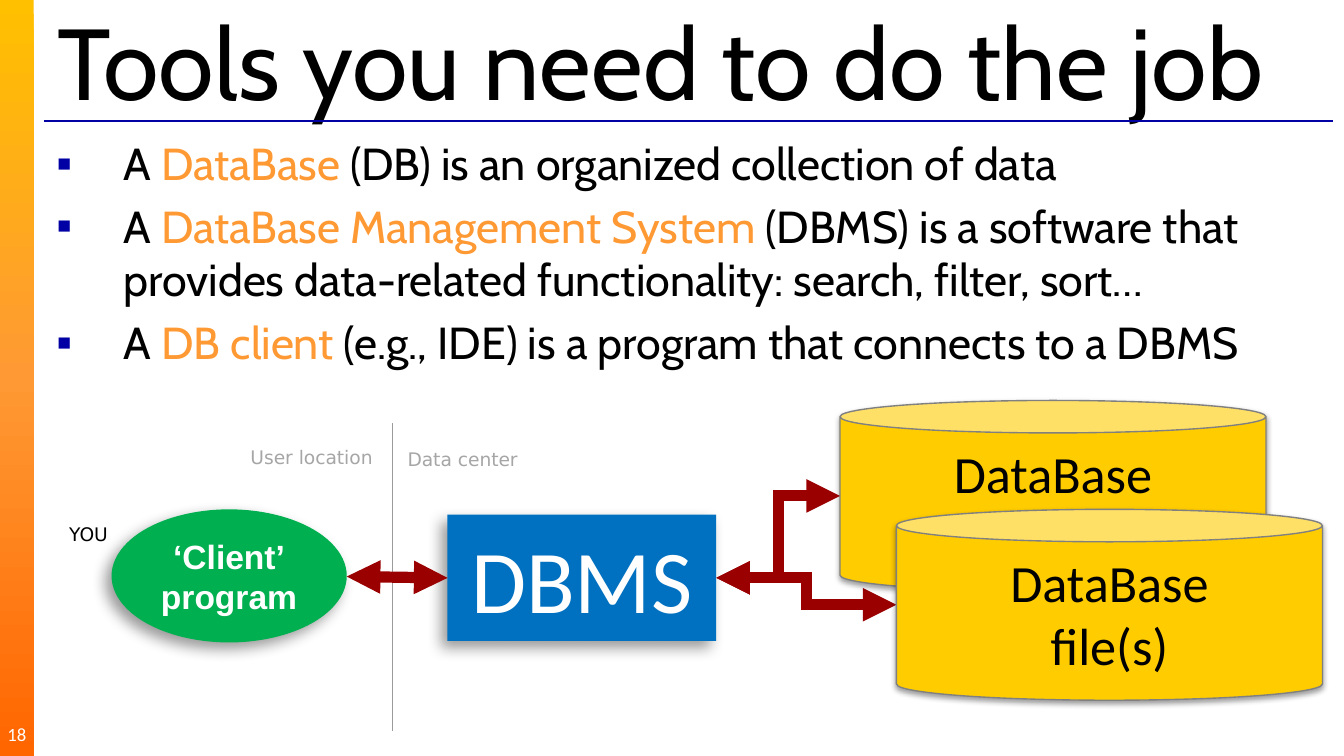
"""Build the slide on the tools needed to work with a database."""
import pptx
import pptx.util
import pptx.oxml
import pptx.oxml.ns
import pptx.dml.color
import pptx.enum.shapes
import pptx.enum.text

Inches = pptx.util.Inches
Pt = pptx.util.Pt
RGBColor = pptx.dml.color.RGBColor
SHAPE = pptx.enum.shapes.MSO_SHAPE
CONNECTOR = pptx.enum.shapes.MSO_CONNECTOR
ALIGN = pptx.enum.text.PP_ALIGN
ANCHOR = pptx.enum.text.MSO_ANCHOR
NS = 'xmlns:a="http://schemas.openxmlformats.org/drawingml/2006/main"'

BLACK = RGBColor(0x00, 0x00, 0x00)
WHITE = RGBColor(0xFF, 0xFF, 0xFF)
ORANGE = RGBColor(0xFF, 0x99, 0x33)
NAVY = RGBColor(0x00, 0x00, 0xA5)
BLUE = RGBColor(0x00, 0x70, 0xC0)
GREEN = RGBColor(0x00, 0xB0, 0x50)
YELLOW = RGBColor(0xFF, 0xCC, 0x00)
RED = RGBColor(0x9A, 0x00, 0x00)
OUTLINE = RGBColor(0x80, 0x80, 0x80)
DIVIDER = RGBColor(0x9B, 0x9B, 0x9B)
LABEL = RGBColor(0xA6, 0xA6, 0xA6)


def write(p, text, font="Calibri", size=10, color=BLACK, bold=False, align=ALIGN.LEFT):
    p.alignment = align
    for i, line in enumerate(text.split("\n")):
        if i:
            p.add_line_break()
        r = p.add_run()
        r.text = line
        r.font.name = font
        r.font.size = Pt(size)
        r.font.bold = bold
        r.font.color.rgb = color


def connect(kind, start, end, color, width, arrows=False):
    c = s.shapes.add_connector(kind, *map(Inches, start + end))
    c.line.color.rgb = color
    c.line.width = Pt(width)
    if arrows:
        ln = c.line._get_or_add_ln()
        for tag in ('miter {} lim="800000"', 'headEnd {} type="triangle"', 'tailEnd {} type="triangle"'):
            ln.append(pptx.oxml.parse_xml(f"<a:{tag.format(NS)}/>"))
    c._element.spPr.append(pptx.oxml.parse_xml(f"<a:effectLst {NS}/>"))


prs = pptx.Presentation()
prs.slide_width = Inches(10)
prs.slide_height = Inches(10 * 9 / 16)
s = prs.slides.add_slide(prs.slide_layouts[1])

sp = s.shapes.add_shape(SHAPE.RECTANGLE, 0, 0, Inches(0.25), prs.slide_height)
sp.shadow.inherit = False
sp.line.fill.background()
stops = "".join(
    f'<a:gs pos="{pos}000"><a:srgbClr val="{color}"/></a:gs>'
    for pos, color in ((0, "FFC000"), (50, "FF9933"), (100, "FF6600"))
)
sp._element.spPr.find(pptx.oxml.ns.qn("a:prstGeom")).addnext(pptx.oxml.parse_xml(
    f'<a:gradFill {NS} rotWithShape="1"><a:gsLst>{stops}</a:gsLst><a:lin ang="5400000" scaled="0"/></a:gradFill>'
))
connect(CONNECTOR.STRAIGHT, (0.33, 0.9), (9.92, 0.9), NAVY, 0.75)

title, body = s.placeholders
for sp, box in ((title, (0.33, 0.07, 9.58, 0.75)), (body, (0.32, 0.96, 9.33, 4.33))):
    sp.left, sp.top, sp.width, sp.height = map(Inches, box)
    sp.text_frame.auto_size = pptx.enum.text.MSO_AUTO_SIZE.NONE
title.text_frame.vertical_anchor = ANCHOR.MIDDLE
write(title.text_frame.paragraphs[0], "Tools you need to do the job", font="Cabin", size=54)

bullets = [
    ("DataBase", " (DB) is an organized collection of data"),
    ("DataBase Management System ",
     "(DBMS) is a software that provides data-related functionality: search, filter, sort…"),
    ("DB client ", "(e.g., IDE) is a program that connects to a DBMS"),
]
tf = body.text_frame
for i, (term, meaning) in enumerate(bullets):
    p = tf.add_paragraph() if i else tf.paragraphs[0]
    pPr = p._p.get_or_add_pPr()
    pPr.set("marL", str(Inches(0.5)))
    pPr.set("indent", str(Inches(-0.5)))
    for xml in (f'<a:buClr {NS}><a:srgbClr val="{NAVY}"/></a:buClr>',
                f'<a:buFont {NS} typeface="Arial"/>',
                f'<a:buChar {NS} char="▪"/>'):
        pPr.append(pptx.oxml.parse_xml(xml))
    p.space_before = Pt(4.8 if i else 0)
    for text, color in (("A ", BLACK), (term, ORANGE), (meaning, BLACK)):
        write(p, text, font="Cabin", size=24, color=color)

connect(CONNECTOR.ELBOW, (5.33, 4.3), (6.67, 4.5), RED, 6, arrows=True)

deep = (8, 5, 135, 40)
soft = (3.1, 1.6, 90, 38)
can = dict(size=28)
nodes = [
    (SHAPE.RECTANGLE, (3.33, 3.83, 2, 0.94), BLUE, deep, 0.1, "DBMS", dict(size=48, color=WHITE)),
    (SHAPE.CAN, (6.25, 2.98, 3.17, 1.42), YELLOW, soft, 0.52, "DataBase", can),
    (SHAPE.CAN, (6.67, 3.79, 3.17, 1.42), YELLOW, soft, 0.05, "DataBase\nfile(s)", can),
    (SHAPE.OVAL, (0.83, 3.79, 1.75, 0.99), GREEN, deep, 0.05, "‘Client’\nprogram",
     dict(font="Arial", size=18, color=WHITE, bold=True)),
]
for kind, box, fill, (blur, dist, angle, alpha), bottom, text, fmt in nodes:
    sp = s.shapes.add_shape(kind, *map(Inches, box))
    sp.fill.solid()
    sp.fill.fore_color.rgb = fill
    sp.line.fill.background()
    tf = sp.text_frame
    tf.vertical_anchor = ANCHOR.MIDDLE
    tf.word_wrap = kind != SHAPE.RECTANGLE
    tf.margin_top = Inches(0.1 if kind == SHAPE.RECTANGLE else 0.05)
    tf.margin_bottom = Inches(bottom)
    if kind == SHAPE.CAN:
        sp.adjustments[0] = 0.17
        sp.line.color.rgb = OUTLINE
        sp.line.width = Pt(0.75)
    sp._element.spPr.append(pptx.oxml.parse_xml(
        f'<a:effectLst {NS}><a:outerShdw blurRad="{Pt(blur)}" dist="{Pt(dist)}" dir="{angle * 60000}" '
        f'rotWithShape="0"><a:srgbClr val="000000"><a:alpha val="{alpha}000"/></a:srgbClr>'
        "</a:outerShdw></a:effectLst>"
    ))
    write(tf.paragraphs[0], text, align=ALIGN.CENTER, **fmt)

connect(CONNECTOR.ELBOW, (5.33, 4.3), (6.25, 3.69), RED, 6, arrows=True)
connect(CONNECTOR.STRAIGHT, (2.92, 3.15), (2.92, 5.44), DIVIDER, 0.75)
connect(CONNECTOR.STRAIGHT, (3.33, 4.3), (2.58, 4.29), RED, 6, arrows=True)

labels = [
    ("Data center", (2.92, 3.28, 1.03, 0.27), LABEL),
    ("User location", (1.75, 3.27, 1.12, 0.27), LABEL),
    ("YOU", (0.38, 3.84, 0.52, 0.27), BLACK),
]
for text, box, color in labels:
    tf = s.shapes.add_textbox(*map(Inches, box)).text_frame
    tf.word_wrap = True
    tf.margin_left = 0
    write(tf.paragraphs[0], text, font="DejaVu Sans", color=color, align=ALIGN.RIGHT)

tf = s.shapes.add_textbox(0, Inches(5.31), Inches(0.25), Inches(0.3)).text_frame
tf.margin_left = tf.margin_right = tf.margin_top = tf.margin_bottom = 0
tf.word_wrap = True
tf.vertical_anchor = ANCHOR.MIDDLE
write(tf.paragraphs[0], "18", color=WHITE, align=ALIGN.CENTER)

prs.save("out.pptx")
